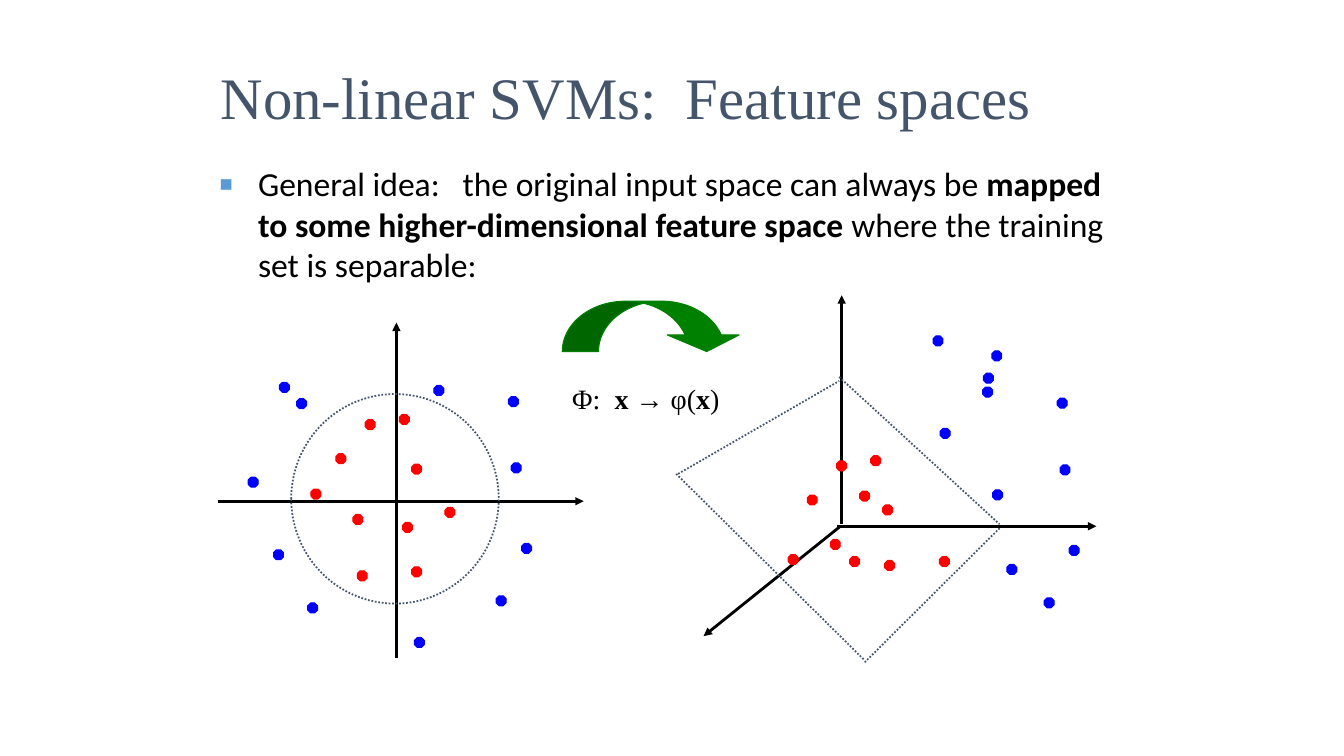
from dataclasses import dataclass

from lxml.etree import SubElement
from pptx import Presentation
from pptx.dml.color import RGBColor
from pptx.enum.dml import MSO_LINE
from pptx.enum.shapes import MSO_CONNECTOR, MSO_SHAPE
from pptx.enum.text import MSO_ANCHOR, MSO_AUTO_SIZE, PP_ALIGN
from pptx.oxml.ns import qn
from pptx.util import Cm, Pt


@dataclass(frozen=True)
class Theme:
    """Colours, fonts, type sizes and line widths of the slide."""
    ink: RGBColor = RGBColor.from_string("000000")
    slate: RGBColor = RGBColor.from_string("44546A")
    inner: RGBColor = RGBColor.from_string("FF0000")
    outer: RGBColor = RGBColor.from_string("0000FF")
    green: RGBColor = RGBColor.from_string("008000")
    bullet: str = "5B9BD5"
    serif: str = "Times New Roman"
    sans: str = "Calibri"
    title_size: int = 42
    body_size: int = 24
    label_size: int = 20
    axis_width: float = 2
    boundary_width: float = 1.25
    outline_width: float = 0.75


@dataclass(frozen=True)
class Box:
    """A region of the slide, in centimetres."""
    left: float
    top: float
    width: float
    height: float

    def lengths(self):
        """Return the four sides as slide lengths."""
        return [Cm(side) for side in (self.left, self.top, self.width, self.height)]


@dataclass(frozen=True)
class Plot:
    """Axes, dividing lines and points, measured in centimetres from the origin."""
    origin: tuple
    axes: list
    boundary: list
    inner: list
    outer: list


THEME = Theme()
DOT_SIZE = 0.25

INPUT_SPACE = Plot(
    origin=(4.5, 4.5),
    axes=[((0, -3.96), (0, 4.5)), ((-4.5, 0), (4.72, 0))],
    boundary=[],
    inner=[(0.2, 2.06), (-1.4, 1.07), (-0.97, -0.46), (0.51, -1.78), (-0.66, 1.93),
           (-2.03, 0.18), (-0.86, -1.88), (0.51, 0.81), (1.35, -0.28), (0.28, -0.66)],
    outer=[(3.02, 0.84), (2.64, -2.51), (-3.61, 0.48), (0.58, -3.56), (3.28, -1.19),
           (-2.11, -2.69), (-2.97, -1.35), (-2.82, 2.87), (1.07, 2.79), (-2.39, 2.46),
           (2.95, 2.51)],
)

FEATURE_SPACE = Plot(
    origin=(4.14, 5.82),
    axes=[((0.03, 0.05), (0.03, 5.82)), ((-0.08, 0), (6.45, 0)), ((0, 0), (-3.45, -2.77))],
    boundary=[((-0.03, 3.76), (4.01, 0.05)), ((0.61, -3.43), (4.01, -0.05)),
              ((-4.09, 1.32), (-0.03, 3.66)), ((-4.14, 1.32), (0.61, -3.38))],
    inner=[(0.89, 1.65), (-0.71, 0.66), (0.36, -0.89), (2.62, -0.89), (0.03, 1.52),
           (0.61, 0.76), (1.24, -0.99), (1.19, 0.41), (-0.13, -0.46), (-1.19, -0.84)],
    outer=[(5.66, 1.42), (5.26, -1.93), (3.94, 4.29), (3.96, 0.79), (5.89, -0.61),
           (2.64, 2.34), (4.32, -1.09), (3.73, 3.73), (3.71, 3.38), (2.46, 4.67),
           (5.59, 3.1)],
)


def add_spans(para, pieces, font, size, color):
    """Write (text, bold) pieces into a paragraph in one type style."""
    for text, bold in pieces:
        span = para.add_run()
        span.text = text
        span.font.name = font
        span.font.size = Pt(size)
        span.font.bold = bold
        span.font.color.rgb = color


def place_text(shape, box, anchor):
    """Move a text shape to its box and return its first paragraph."""
    shape.left, shape.top, shape.width, shape.height = box.lengths()
    frame = shape.text_frame
    frame.word_wrap = True
    frame.auto_size = MSO_AUTO_SIZE.NONE
    frame.vertical_anchor = anchor
    para = frame.paragraphs[0]
    para.alignment = PP_ALIGN.LEFT
    return para


def add_title(page, box):
    """Fill the title placeholder."""
    para = place_text(page.shapes.title, box, MSO_ANCHOR.MIDDLE)
    add_spans(para, [("Non-linear SVMs:  Feature spaces", False)],
              THEME.serif, THEME.title_size, THEME.slate)


def add_body(page, box):
    """Fill the body placeholder with its one square-bulleted point."""
    para = place_text(page.placeholders[1], box, MSO_ANCHOR.TOP)
    para.space_before = Pt(0.2 * THEME.body_size)
    add_spans(para, [
        ("General idea:   the original input space can always be ", False),
        ("mapped to some higher-dimensional feature space ", True),
        ("where the training set is separable:", False),
    ], THEME.sans, THEME.body_size, THEME.ink)
    properties = para._p.get_or_add_pPr()
    indent = Cm(0.97)
    properties.set("marL", str(indent))
    properties.set("indent", str(-indent))
    color = SubElement(properties, qn("a:buClr"))
    SubElement(color, qn("a:srgbClr"), val=THEME.bullet)
    SubElement(properties, qn("a:buSzPct"), val="65000")
    SubElement(properties, qn("a:buFont"), typeface="Arial")
    SubElement(properties, qn("a:buChar"), char="■")


def add_line(page, start, end, color, width):
    """Draw a straight line between two points in centimetres."""
    line = page.shapes.add_connector(
        MSO_CONNECTOR.STRAIGHT, *[Cm(value) for value in (*start, *end)])
    line.line.color.rgb = color
    line.line.width = Pt(width)
    SubElement(line._element.spPr, qn("a:effectLst"))
    return line


def add_filled(page, preset, box, color):
    """Draw a preset shape with fill and outline in one colour."""
    shape = page.shapes.add_shape(preset, *box.lengths())
    shape.shadow.inherit = False
    shape.fill.solid()
    shape.fill.fore_color.rgb = color
    shape.line.color.rgb = color
    shape.line.width = Pt(THEME.outline_width)
    return shape


def add_plot(page, box, plot):
    """Draw axes, boundary lines and both classes of points in a box."""
    def locate(point):
        return (box.left + plot.origin[0] + point[0], box.top + plot.origin[1] - point[1])

    for start, end in plot.axes:
        axis = add_line(page, locate(start), locate(end), THEME.ink, THEME.axis_width)
        SubElement(axis.line._get_or_add_ln(), qn("a:tailEnd"), type="triangle")
    for color, points in ((THEME.inner, plot.inner), (THEME.outer, plot.outer)):
        for point in points:
            x, y = locate(point)
            dot = Box(x - DOT_SIZE / 2, y - DOT_SIZE / 2, DOT_SIZE, DOT_SIZE)
            add_filled(page, MSO_SHAPE.OCTAGON, dot, color).adjustments[0] = 0.29
    for start, end in plot.boundary:
        edge = add_line(page, locate(start), locate(end), THEME.slate, THEME.boundary_width)
        edge.line.dash_style = MSO_LINE.ROUND_DOT


def add_input_space(page, box):
    """Draw the flat plot with its dotted circular boundary."""
    add_plot(page, box, INPUT_SPACE)
    ring = Box(box.left + 1.85, box.top + 1.8, 5.23, 5.28)
    circle = page.shapes.add_shape(MSO_SHAPE.OVAL, *ring.lengths())
    circle.shadow.inherit = False
    circle.fill.background()
    circle.line.color.rgb = THEME.slate
    circle.line.width = Pt(THEME.boundary_width)
    circle.line.dash_style = MSO_LINE.ROUND_DOT


def add_mapping(page, box):
    """Draw the curved arrow with the mapping formula below it."""
    arrow = add_filled(page, MSO_SHAPE.CURVED_DOWN_ARROW,
                       Box(box.left, box.top, 4.55, 1.27), THEME.green)
    for index, value in enumerate((0.72, 1.43, 0.33)):
        arrow.adjustments[index] = value
    label_box = Box(box.left, box.top + 1.91, box.width, box.height - 1.91)
    label = page.shapes.add_textbox(*label_box.lengths())
    para = place_text(label, label_box, MSO_ANCHOR.TOP)
    para.space_before = Pt(0.5 * THEME.label_size)
    add_spans(para, [("Φ:  ", False), ("x → ", True), ("φ(", False), ("x", True), (")", False)],
              THEME.serif, THEME.label_size, THEME.ink)


def main():
    """Build the slide and save the deck."""
    deck = Presentation()
    deck.slide_width, deck.slide_height = Cm(33.87), Cm(19.05)
    page = deck.slides.add_slide(deck.slide_layouts[1])
    add_title(page, Box(5.31, 1.37, 21.59, 2.11))
    add_body(page, Box(5.28, 3.99, 22.86, 13.97))
    add_input_space(page, Box(5.49, 8.13, 9.22, 8.46))
    add_plot(page, Box(17.04, 7.44, 10.59, 9.25), FEATURE_SPACE)
    add_mapping(page, Box(14.17, 7.59, 5.28, 3))
    deck.save("out.pptx")


if __name__ == "__main__":
    main()
